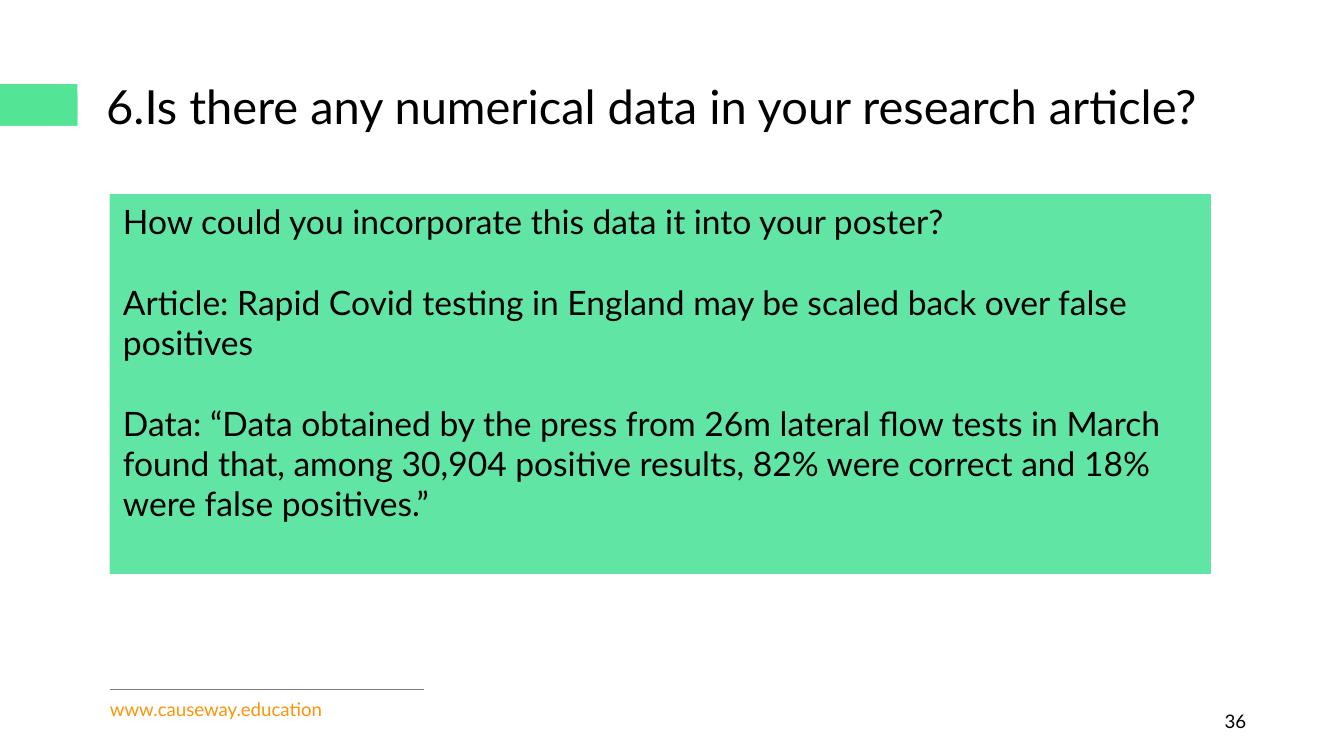
from lxml import etree
from pptx import Presentation
from pptx import util as u
from pptx.dml.color import RGBColor
from pptx.enum import shapes, text
from pptx.oxml.ns import qn

BLACK = RGBColor(0x00, 0x00, 0x00)
GREEN = RGBColor(0x54, 0xE4, 0x95)
LIGHT_GREEN = RGBColor(0x61, 0xE5, 0xA5)
ORANGE = RGBColor(0xFD, 0x94, 0x09)
GREY = RGBColor(0x80, 0x80, 0x80)

CELL = u.Inches(0.1)  # the slide is a 16:9 grid of 100 columns by 56.25 rows
COLUMNS, ROWS = 100, 56.25


def cells(*counts):
    return [u.Emu(round(count * CELL)) for count in counts]


def write(frame, *lines, size=10, color=BLACK, align=text.PP_ALIGN.LEFT,
          anchor=text.MSO_ANCHOR.TOP, spacing=1.0, gap=0):
    """Fill a text frame with one plain, unbulleted paragraph per line."""
    frame.word_wrap = True
    frame.auto_size = text.MSO_AUTO_SIZE.NONE
    frame.vertical_anchor = anchor
    for index, line in enumerate(lines):
        paragraph = frame.add_paragraph() if index else frame.paragraphs[0]
        properties = paragraph._p.get_or_add_pPr()
        properties.set("marL", "0")
        properties.set("indent", "0")
        etree.SubElement(properties, qn("a:buNone"))
        paragraph.alignment = align
        paragraph.line_spacing = spacing
        paragraph.space_before = u.Pt(gap if index else 0)
        paragraph.space_after = u.Pt(0)
        run = paragraph.add_run()
        run.text = line
        run.font.name = "Lato"
        run.font.size = u.Pt(size)
        run.font.color.rgb = color


class Page:
    def __init__(self, deck):
        self.slide = deck.slides.add_slide(deck.slide_layouts[1])
        self.shapes = self.slide.shapes

    def placeholder(self, index, area, *lines, fill=None, **style):
        holder = self.slide.placeholders[index]
        holder.left, holder.top, holder.width, holder.height = cells(*area)
        if fill is not None:
            holder.fill.solid()
            holder.fill.fore_color.rgb = fill
        write(holder.text_frame, *lines, **style)

    def label(self, area, line, **style):
        write(self.shapes.add_textbox(*cells(*area)).text_frame, line, **style)

    def block(self, area, color):
        block = self.shapes.add_shape(shapes.MSO_SHAPE.RECTANGLE, *cells(*area))
        block.shadow.inherit = False
        block.fill.solid()
        block.fill.fore_color.rgb = color
        block.line.fill.background()

    def rule(self, ends, color, width):
        rule = self.shapes.add_connector(shapes.MSO_CONNECTOR.STRAIGHT, *cells(*ends))
        rule.line.color.rgb = color
        rule.line.width = u.Pt(width)
        etree.SubElement(rule._element.spPr, qn("a:effectLst"))


def main():
    deck = Presentation()
    deck.slide_width, deck.slide_height = cells(COLUMNS, ROWS)
    page = Page(deck)

    # Green tab at the left edge, in two layers with a shared bottom
    tab_bottom = 9.35
    for top in (6.25, 6.95):
        page.block((0, top, 5.75, tab_bottom - top), GREEN)

    # Question and example
    page.placeholder(0, (6.9, 3.7, 86.2, 8.9),
                     "6.Is there any numerical data in your research article?",
                     size=25.2, anchor=text.MSO_ANCHOR.MIDDLE, spacing=0.9)
    page.placeholder(1, (8.15, 14.45, 81.95, 28.25),
                     "How could you incorporate this data it into your poster?",
                     "Article: Rapid Covid testing in England may be scaled back "
                     "over false positives",
                     "Data: “Data obtained by the press from 26m lateral flow tests "
                     "in March found that, among 30,904 positive results, 82% were "
                     "correct and 18% were false positives.”",
                     fill=LIGHT_GREEN, size=18, gap=21.6)

    # Footer
    page.rule((8.2, 51.3, 31.55, 51.3), GREY, 0.5)
    page.label((7.2, 51.45, 50, 2.7), "www.causeway.education", color=ORANGE)
    page.label((71.2, 52.15, 22.5, 3), "36", align=text.PP_ALIGN.RIGHT,
               anchor=text.MSO_ANCHOR.MIDDLE)

    deck.save("out.pptx")


if __name__ == "__main__":
    main()
